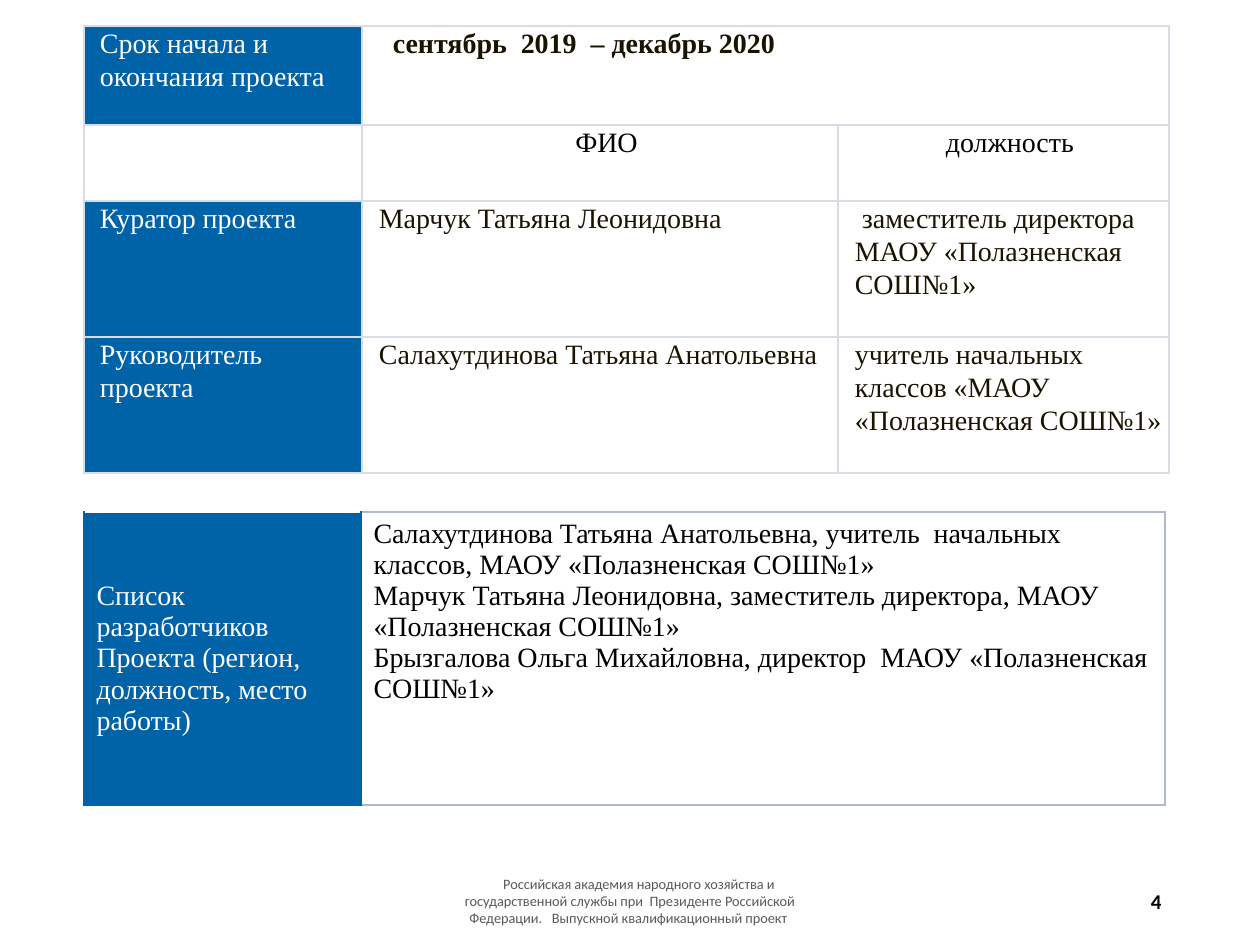
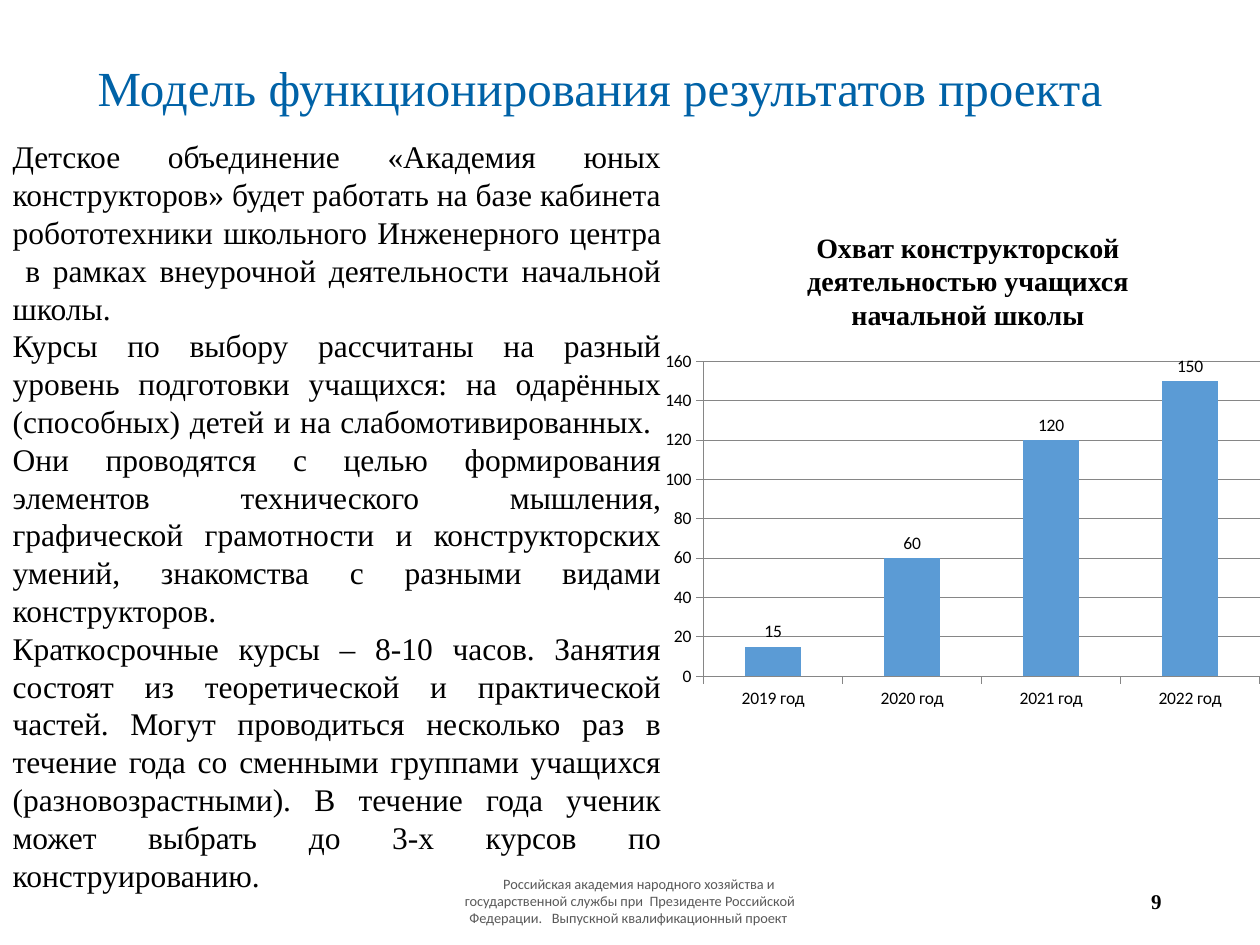
from lxml import etree
from pptx import Presentation
from pptx.chart.data import CategoryChartData
from pptx.dml.color import RGBColor
from pptx.enum.chart import XL_CHART_TYPE, XL_LABEL_POSITION, XL_TICK_MARK
from pptx.enum.text import MSO_ANCHOR, MSO_AUTO_SIZE, PP_ALIGN
from pptx.oxml.ns import qn
from pptx.util import Pt

LEFT, CENTER, RIGHT, JUSTIFY = PP_ALIGN.LEFT, PP_ALIGN.CENTER, PP_ALIGN.RIGHT, PP_ALIGN.JUSTIFY
TOP, MIDDLE, BOTTOM = MSO_ANCHOR.TOP, MSO_ANCHOR.MIDDLE, MSO_ANCHOR.BOTTOM
NO_FIT = MSO_AUTO_SIZE.NONE
COLUMNS = XL_CHART_TYPE.COLUMN_CLUSTERED
OUTSIDE = XL_LABEL_POSITION.OUTSIDE_END
TICK = XL_TICK_MARK.OUTSIDE

PX = 914400 / 126
TITLE_AND_BODY, BLANK = 1, 6
SERIF, SANS = "Times New Roman", "Calibri"
COLORS = {"blue": "0062A7", "white": "FFFFFF", "black": "000000", "dark": "1A1300",
          "footer": "595959", "grid": "D8DCE5", "edge": "B0B9CB", "bar": "5B9BD5",
          "axis": "868686"}

FOOTER = ("Российская академия народного хозяйства и государственной службы при  "
          "Президенте Российской Федерации.   Выпускной квалификационный проект ")
FOOTER_BOX, NUMBER_BOX = (426, 876, 408, 50), (891, 876, 283, 50)

STYLES = {
    "footer": {"size": 8.2, "name": SANS, "color": "footer", "align": CENTER, "first": 18},
    "number": {"size": 12, "name": SANS, "color": "black", "bold": True, "align": RIGHT},
    "title": {"size": 28, "name": SERIF, "color": "blue", "align": LEFT, "spacing": 0.9},
    "body": {"size": 18, "name": SERIF, "color": "black", "align": JUSTIFY},
    "caption": {"size": 16, "name": SERIF, "color": "black", "bold": True, "align": CENTER},
    "label": {"size": 16, "name": SERIF, "color": "white", "left": 12, "spacing": 1.07},
    "value": {"size": 16, "name": SERIF, "color": "dark", "left": 13, "spacing": 1.07},
    "dates": {"size": 16, "name": SERIF, "color": "dark", "bold": True, "left": 27,
              "spacing": 1.07},
    "head": {"size": 16, "name": SERIF, "color": "black", "align": CENTER, "left": 13,
             "spacing": 1.07},
    "authors label": {"size": 16, "name": SERIF, "color": "white"},
    "authors": {"size": 16, "name": SERIF, "color": "black"},
}

TEAM_AT, TEAM_COLS, TEAM_ROWS = (84, 26), (278, 476, 331), (99, 76, 136, 136)
TEAM = [
    [("label", "Срок начала и окончания проекта"), ("dates", "сентябрь  2019  – декабрь 2020"),
     ("value", "")],
    [("value", ""), ("head", "ФИО"), ("head", "должность")],
    [("label", "Куратор проекта"), ("value", "Марчук Татьяна Леонидовна"),
     ("value", " заместитель директора МАОУ «Полазненская СОШ№1»")],
    [("label", "Руководитель проекта"), ("value", "Салахутдинова Татьяна Анатольевна"),
     ("value", "учитель начальных классов «МАОУ «Полазненская СОШ№1»")],
]
AUTHORS_AT, AUTHORS_COLS, AUTHORS_ROWS = (84, 512), (277, 804), (293,)
AUTHORS = [[
    ("authors label", "Список разработчиков\nПроекта (регион,  должность, место работы)"),
    ("authors", "Салахутдинова Татьяна Анатольевна, учитель  начальных классов, "
                "МАОУ «Полазненская СОШ№1»\n"
                "Марчук Татьяна Леонидовна, заместитель директора, "
                "МАОУ  «Полазненская СОШ№1»\n"
                "Брызгалова Ольга Михайловна, директор  МАОУ «Полазненская СОШ№1»"),
]]

TITLE, TITLE_BOX = "Модель функционирования результатов проекта", (52, 55, 1157, 68)
BODY_BOX = (0, 131, 674, 814)
BODY = [
    "Детское объединение «Академия юных конструкторов» будет работать на базе кабинета "
    "робототехники школьного Инженерного центра  в рамках внеурочной деятельности "
    "начальной школы. ",
    "Курсы по выбору рассчитаны на разный уровень подготовки учащихся: на одарённых "
    "(способных) детей и на слабомотивированных.  Они проводятся с целью формирования "
    "элементов технического мышления, графической грамотности и конструкторских умений, "
    "знакомства с разными видами конструкторов. ",
    "Краткосрочные курсы – 8-10 часов. Занятия состоят из теоретической и практической "
    "частей. Могут проводиться несколько раз в течение года со сменными группами учащихся "
    "(разновозрастными). В течение года ученик может выбрать до 3-х курсов по "
    "конструированию. ",
]
CAPTION = "Охват конструкторской деятельностью учащихся начальной школы"
CAPTION_BOX, CHART_BOX = (740, 224, 456, 115), (630, 333, 630, 378)
COVERAGE = {"2019 год": 15, "2020 год": 60, "2021 год": 120, "2022 год": 150}
PLOT = {"x": 0.117, "y": 0.075, "w": 0.883, "h": 0.833}


def px(n):
    return round(n * PX)


def rgb(name):
    return RGBColor.from_string(COLORS[name])


def set_all(obj, values):
    for key, value in values.items():
        setattr(obj, key, value)


def write(tf, lines, style, **changes):
    st = {**STYLES[style], **changes}
    for i, line in enumerate(lines):
        p = tf.paragraphs[0] if i == 0 else tf.add_paragraph()
        set_all(p, {"alignment": st.get("align", LEFT), "line_spacing": st.get("spacing", 1.0),
                    "space_before": Pt(0), "space_after": Pt(0)})
        pPr = p._p.get_or_add_pPr()
        pPr.set("marL", str(px(st.get("left", 0))))
        pPr.set("indent", str(px(st.get("first", 0))))
        etree.SubElement(pPr, qn("a:buNone"))
        r = p.add_run()
        r.text = line
        set_all(r.font, {"size": Pt(st["size"]), "name": st["name"],
                         "bold": st.get("bold", False)})
        r.font.color.rgb = rgb(st["color"])


def place(sp, box, lines, style, anchor=TOP, **changes):
    set_all(sp, dict(zip(("left", "top", "width", "height"), map(px, box))))
    tf = sp.text_frame
    set_all(tf, {"word_wrap": True, "auto_size": NO_FIT, "vertical_anchor": anchor,
                 "margin_left": Pt(7.2), "margin_right": Pt(7.2),
                 "margin_top": Pt(3.6), "margin_bottom": Pt(3.6)})
    write(tf, lines, style, **changes)


def add_text(s, box, *args, **changes):
    place(s.shapes.add_textbox(0, 0, 0, 0), box, *args, **changes)


def add_footer(s, number, font):
    add_text(s, FOOTER_BOX, [FOOTER], "footer", MIDDLE)
    add_text(s, NUMBER_BOX, [number], "number", MIDDLE, name=font)


def set_borders(cell, edges):
    tcPr = cell._tc.get_or_add_tcPr()
    for i, (side, (color, width)) in enumerate(zip("LRTB", edges)):
        ln = etree.Element(qn("a:ln" + side), w=str(Pt(width)))
        fill = etree.SubElement(ln, qn("a:solidFill"))
        etree.SubElement(fill, qn("a:srgbClr"), val=COLORS[color])
        tcPr.insert(i, ln)


def add_grid(s, at, cols, rows, cells, edges, margins=None):
    box = map(px, (*at, sum(cols), sum(rows)))
    table = s.shapes.add_table(len(rows), len(cols), *box).table
    set_all(table, {"first_row": False, "horz_banding": False})
    for col, width in zip(table.columns, cols):
        col.width = px(width)
    for i, height in enumerate(rows):
        table.rows[i].height = px(height)
        for j, (style, text) in enumerate(cells[i]):
            cell = table.cell(i, j)
            set_all(cell, margins or {})
            cell.fill.solid()
            cell.fill.fore_color.rgb = rgb("blue" if "label" in style else "white")
            set_borders(cell, edges[j])
            if text:
                write(cell.text_frame, text.split("\n"), style)
    return table


def add_coverage_chart(s):
    data = CategoryChartData()
    data.categories = list(COVERAGE)
    data.add_series("Series 1", list(COVERAGE.values()))
    chart = s.shapes.add_chart(COLUMNS, *map(px, CHART_BOX), data).chart
    set_all(chart, {"has_title": False, "has_legend": False})
    set_all(chart.font, {"size": Pt(10), "name": SANS})
    chart.font.color.rgb = rgb("black")
    cat, val = chart.category_axis, chart.value_axis
    set_all(val, {"minimum_scale": 0, "maximum_scale": 160, "major_unit": 20,
                  "has_major_gridlines": True})
    for axis in (cat, val):
        axis.major_tick_mark = TICK
    for part in (cat, val, val.major_gridlines):
        part.format.line.color.rgb = rgb("axis")
        part.format.line.width = Pt(0.5)
    plot = chart.plots[0]
    set_all(plot, {"gap_width": 150, "vary_by_categories": False, "has_data_labels": True})
    set_all(plot.data_labels, {"show_value": True, "position": OUTSIDE})
    fill = plot.series[0].format.fill
    fill.solid()
    fill.fore_color.rgb = rgb("bar")
    area = chart._chartSpace.chart.plotArea
    for old in area.findall(qn("c:layout")):
        area.remove(old)
    layout = etree.Element(qn("c:layout"))
    manual = etree.SubElement(layout, qn("c:manualLayout"))
    parts = {"layoutTarget": "inner", "xMode": "edge", "yMode": "edge", **PLOT}
    for key, value in parts.items():
        etree.SubElement(manual, qn("c:" + key), val=str(value))
    area.insert(0, layout)


def build_team(prs):
    s = prs.slides.add_slide(prs.slide_layouts[BLANK])
    add_footer(s, "4", SANS)
    margins = {"margin_left": px(4), "margin_right": px(4), "margin_top": 0, "margin_bottom": 0}
    team = add_grid(s, TEAM_AT, TEAM_COLS, TEAM_ROWS, TEAM, [[("grid", 1)] * 4] * 3, margins)
    team.cell(0, 1).merge(team.cell(0, 2))
    label_edges = [("blue", 1.5), ("blue", 1), ("white", 1.5), ("blue", 1.5)]
    authors = add_grid(s, AUTHORS_AT, AUTHORS_COLS, AUTHORS_ROWS, AUTHORS,
                       [label_edges, [("blue", 1)] + [("edge", 1)] * 3])
    authors.cell(0, 0).vertical_anchor = MIDDLE


def build_model(prs):
    s = prs.slides.add_slide(prs.slide_layouts[TITLE_AND_BODY])
    add_footer(s, "9", SERIF)
    place(s.shapes.title, TITLE_BOX, [TITLE], "title", BOTTOM, left=33)
    place(s.placeholders[1], BODY_BOX, BODY, "body")
    add_coverage_chart(s)
    add_text(s, CAPTION_BOX, [CAPTION], "caption")


def main():
    """Build the project team slide and the results model slide."""
    prs = Presentation()
    set_all(prs, {"slide_width": px(1260), "slide_height": px(945)})
    build_team(prs)
    build_model(prs)
    prs.save("out.pptx")


if __name__ == "__main__":
    main()
